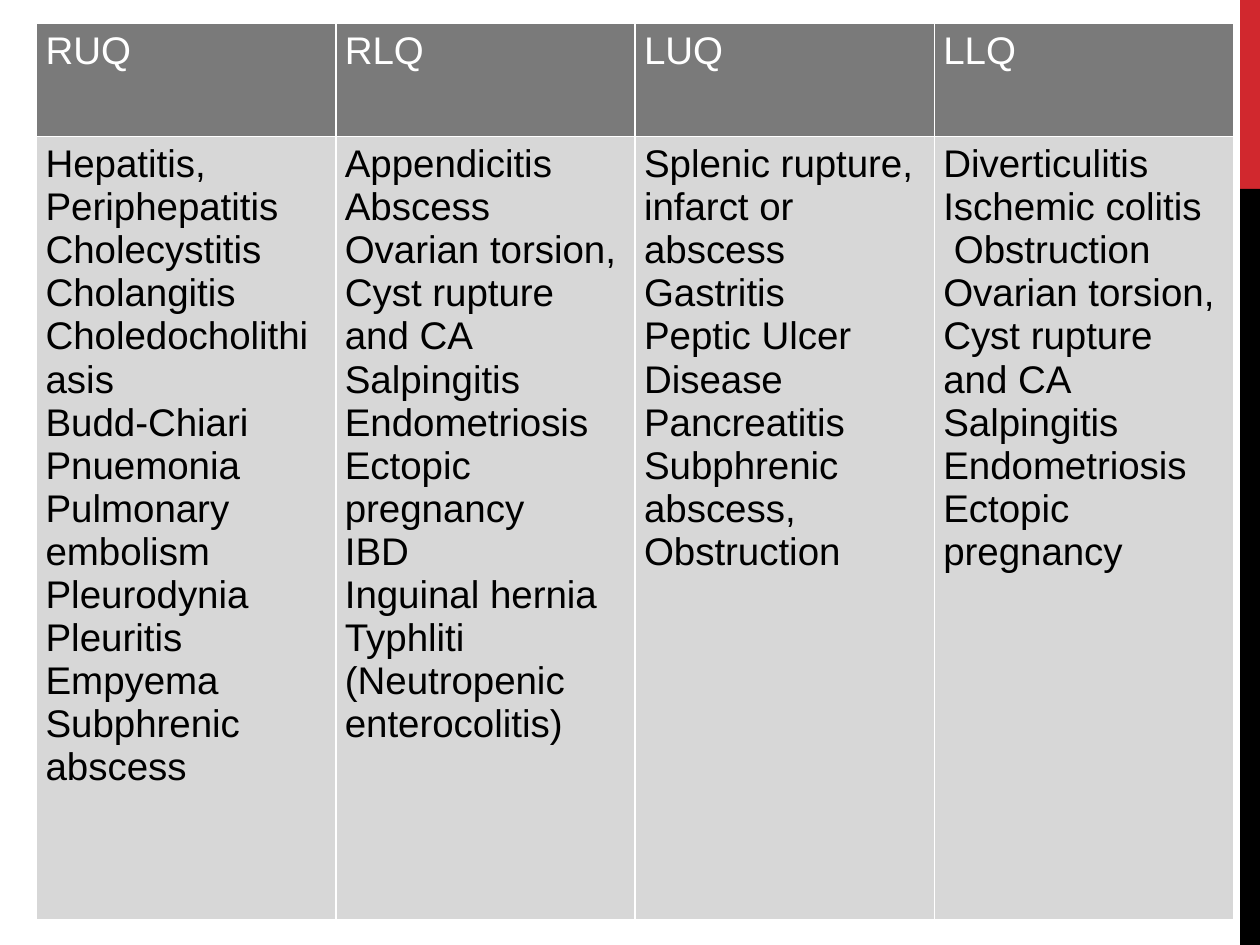
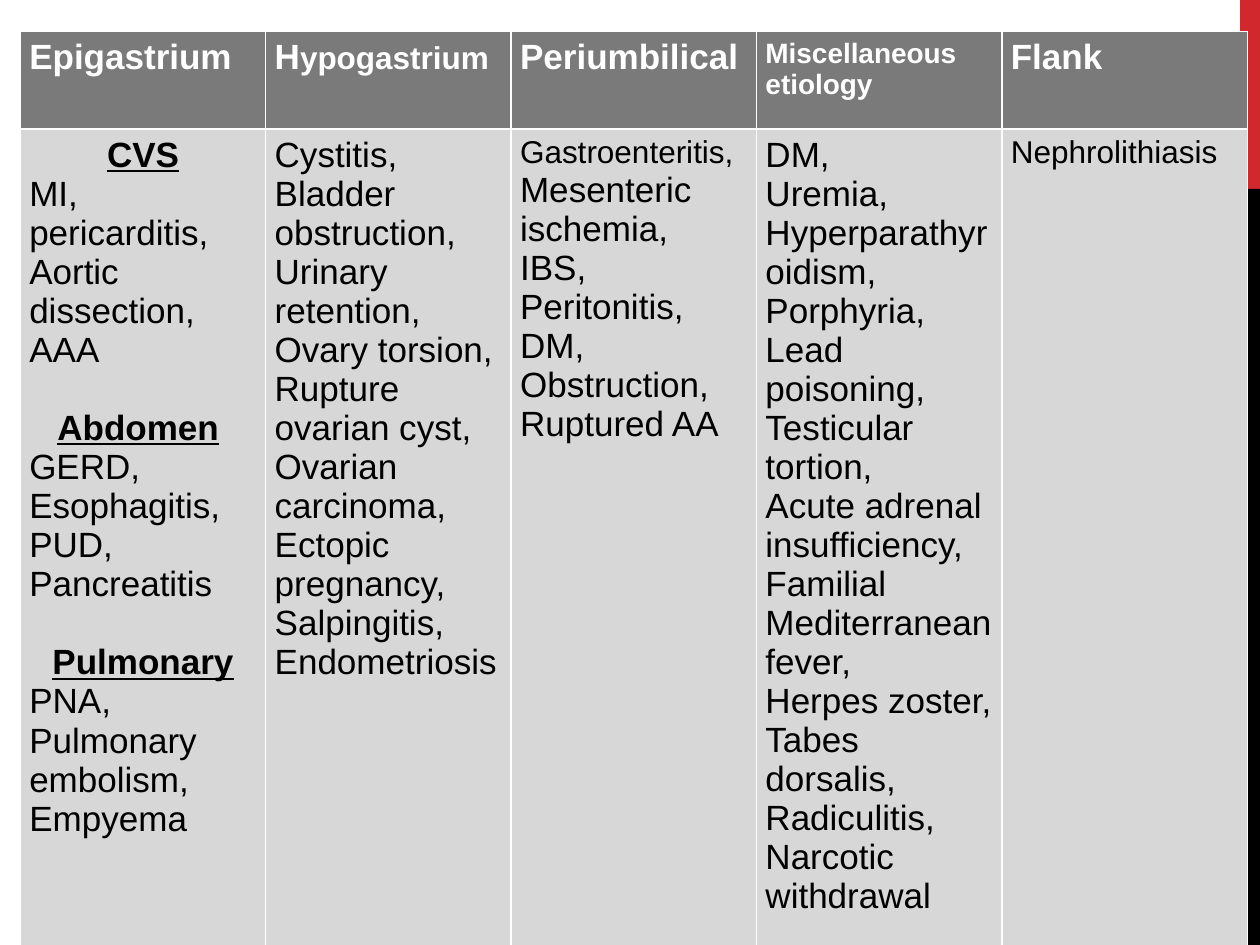
from dataclasses import dataclass

from lxml import etree
from pptx import Presentation, util as u
from pptx.dml.color import RGBColor
from pptx.enum import shapes, text
from pptx.oxml import ns


@dataclass(frozen=True)
class Theme:
    font: str = "Arial"
    white: str = "FFFFFF"
    black: str = "000000"
    red: str = "D1282E"
    header_fill: str = "7A7A7A"
    body_fill: str = "D7D7D7"
    quadrant_size: int = 22
    region_size: int = 20
    tight_size: int = 18
    small_size: int = 16
    group_gap: float = 22.4
    border: float = 1


THEME = Theme()
SLIDE_W, SLIDE_H = 25.4, 19.05
BAND_W, RED_H = 0.4, 3.81


@dataclass
class Line:
    """One paragraph: (text, format) runs, alignment and space above."""
    runs: list
    centred: bool = False
    gap: float = 0


def sized(words, size):
    return Line([(words, {"size": size})])


def group(name, gap=0, tail=""):
    runs = [(name, {"bold": True, "underline": True})]
    if tail:
        runs.append((tail, {}))
    return Line(runs, centred=True, gap=gap)


def write(paragraph, words, *, size, color, bold=False, underline=False):
    run = paragraph.add_run()
    run.text = words
    font = run.font
    font.name, font.size = THEME.font, u.Pt(size)
    font.bold, font.underline = bold, underline
    font.color.rgb = RGBColor.from_string(color)


class Deck:
    def __init__(self, theme):
        self.theme = theme
        self.prs = Presentation()
        self.prs.slide_width, self.prs.slide_height = u.Cm(SLIDE_W), u.Cm(SLIDE_H)
        self.slide = None

    def new_slide(self):
        self.slide = self.prs.slides.add_slide(self.prs.slide_layouts[6])
        # Edge bands on the right
        self.band(0, RED_H, self.theme.red)
        self.band(RED_H, SLIDE_H - RED_H, self.theme.black)

    def band(self, top, height, color):
        edge = self.slide.shapes.add_shape(
            shapes.MSO_SHAPE.RECTANGLE, u.Cm(SLIDE_W - BAND_W), u.Cm(top),
            u.Cm(BAND_W), u.Cm(height))
        edge.shadow.inherit = False
        edge.fill.solid()
        edge.fill.fore_color.rgb = RGBColor.from_string(color)
        edge.line.fill.background()

    def table(self, columns, left, top, width, row_heights, size, bold_header):
        """columns maps each header to its list of body lines."""
        grid = self.slide.shapes.add_table(
            2, len(columns), u.Cm(left), u.Cm(top), u.Cm(width),
            u.Cm(sum(row_heights))).table
        grid.first_row = grid.horz_banding = False
        for row, height in zip(grid.rows, row_heights):
            row.height = u.Cm(height)
        for index, (header, causes) in enumerate(columns):
            grid.columns[index].width = u.Cm(width / len(columns))
            self.cell(grid.cell(0, index), [header], self.theme.header_fill,
                      size=size, color=self.theme.white, bold=bold_header)
            self.cell(grid.cell(1, index), causes, self.theme.body_fill,
                      size=size, color=self.theme.black)

    def cell(self, cell, lines, fill, **base):
        cell.margin_left = cell.margin_right = u.Cm(0.18)
        cell.margin_top = cell.margin_bottom = u.Cm(0.13)
        cell.vertical_anchor = text.MSO_ANCHOR.TOP
        self.borders(cell)
        cell.fill.solid()
        cell.fill.fore_color.rgb = RGBColor.from_string(fill)
        frame = cell.text_frame
        for number, line in enumerate(lines):
            if isinstance(line, str):
                line = Line([(line, {})])
            paragraph = frame.add_paragraph() if number else frame.paragraphs[0]
            paragraph.alignment = (text.PP_ALIGN.CENTER if line.centred
                                   else text.PP_ALIGN.LEFT)
            paragraph.space_before = u.Pt(line.gap)
            for words, extra in line.runs:
                write(paragraph, words, **{**base, **extra})

    def borders(self, cell):
        properties = cell._tc.get_or_add_tcPr()
        for side in ("a:lnL", "a:lnR", "a:lnT", "a:lnB"):
            line = etree.SubElement(properties, ns.qn(side),
                                    w=str(u.Pt(self.theme.border)))
            solid = etree.SubElement(line, ns.qn("a:solidFill"))
            etree.SubElement(solid, ns.qn("a:srgbClr"), val=self.theme.white)


# Causes of pain by abdominal quadrant
QUADRANTS = [
    ("RUQ", ["Hepatitis,", "Periphepatitis", "Cholecystitis", "Cholangitis",
             "Choledocholithiasis", "Budd-Chiari", "Pnuemonia",
             "Pulmonary embolism", "Pleurodynia", "Pleuritis", "Empyema",
             "Subphrenic abscess"]),
    ("RLQ", ["Appendicitis", "Abscess", "Ovarian torsion, Cyst rupture and CA",
             "Salpingitis", "Endometriosis", "Ectopic pregnancy", "IBD",
             "Inguinal hernia", "Typhliti (Neutropenic enterocolitis)"]),
    ("LUQ", ["Splenic rupture, infarct or abscess", "Gastritis",
             "Peptic Ulcer Disease", "Pancreatitis",
             "Subphrenic abscess, Obstruction"]),
    ("LLQ", ["Diverticulitis", "Ischemic colitis", " Obstruction",
             "Ovarian torsion, Cyst rupture and CA", "Salpingitis",
             "Endometriosis", "Ectopic pregnancy"]),
]

# Causes of pain by other region
REGIONS = [
    ("Epigastrium", [
        group("CVS"), "MI,", "pericarditis,", "Aortic dissection, AAA",
        group("Abdomen", THEME.group_gap, tail=" "),
        "GERD, Esophagitis,", "PUD, Pancreatitis",
        group("Pulmonary", THEME.group_gap),
        "PNA, Pulmonary embolism, Empyema"]),
    (Line([("H", {}), ("ypogastrium", {"size": THEME.tight_size})]), [
        "Cystitis,", "Bladder obstruction,", "Urinary retention,",
        "Ovary torsion,", "Rupture ovarian cyst,", "Ovarian carcinoma,",
        "Ectopic pregnancy,", "Salpingitis,", "Endometriosis"]),
    ("Periumbilical", [
        sized("Gastroenteritis,", THEME.tight_size), "Mesenteric ischemia,",
        "IBS,", "Peritonitis,", "DM,", "Obstruction,", "Ruptured AA"]),
    (sized("Miscellaneous etiology", THEME.small_size), [
        "DM,", "Uremia,", "Hyperparathyroidism,", "Porphyria,",
        "Lead poisoning,", "Testicular tortion,",
        "Acute adrenal insufficiency,", "Familial Mediterranean fever,",
        "Herpes zoster,", "Tabes dorsalis,", "Radiculitis,",
        "Narcotic withdrawal"]),
    ("Flank", [sized("Nephrolithiasis", THEME.tight_size)]),
]


def main():
    deck = Deck(THEME)

    deck.new_slide()
    deck.table(QUADRANTS, left=0.74, top=0.46, width=24.13,
               row_heights=(2.29, 15.8), size=THEME.quadrant_size,
               bold_header=False)

    deck.new_slide()
    deck.table(REGIONS, left=0.41, top=0.64, width=24.74,
               row_heights=(1.96, 18.03), size=THEME.region_size,
               bold_header=True)

    deck.prs.save("out.pptx")


if __name__ == "__main__":
    main()
